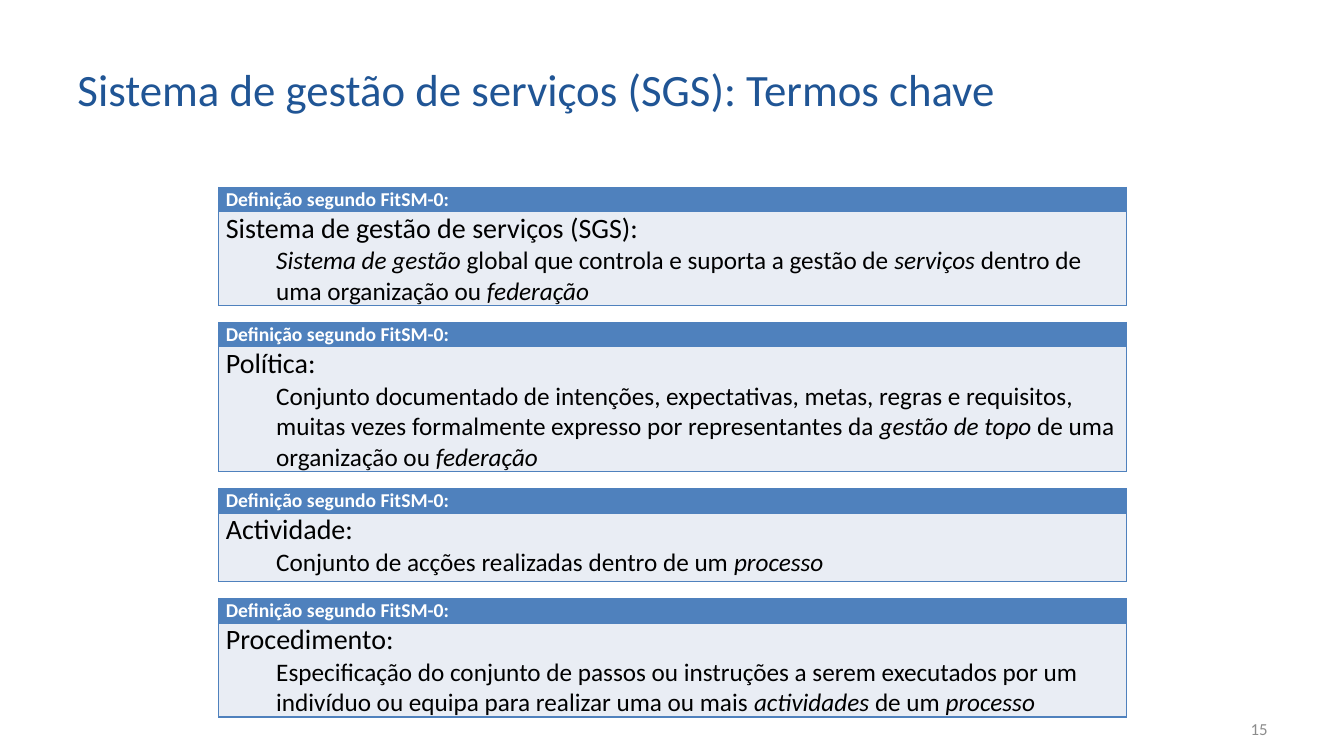
import pptx
import pptx.dml.color
import pptx.enum.text
import pptx.oxml
import pptx.oxml.ns
import pptx.util

Inches = pptx.util.Inches
Pt = pptx.util.Pt
ALIGN = pptx.enum.text.PP_ALIGN
ANCHOR = pptx.enum.text.MSO_ANCHOR

FONT = "Calibri"
BLUE = "4F81BD"
PALE = "E9EDF4"
HEADING = "Definição segundo FitSM-0:"
HEADING_HEIGHT = 0.24
GAP = 0.17

# Term, definition (asterisks enclose italics), height of the definition row
DEFINITIONS = [
    ("Sistema de gestão de serviços (SGS):",
     "*Sistema de gestão *global que controla e suporta a gestão de *serviços *"
     "dentro de uma organização ou *federação*", 0.93),
    ("Política:",
     "Conjunto documentado de intenções, expectativas, metas, regras e requisitos, "
     "muitas vezes formalmente expresso por representantes da *gestão de topo *"
     "de uma organização ou *federação*", 1.24),
    ("Actividade:",
     "Conjunto de acções realizadas dentro de um *processo*", 0.68),
    ("Procedimento:",
     "Especificação do conjunto de passos ou instruções a serem executados por um "
     "indivíduo ou equipa para realizar uma ou mais *actividades *de um *processo*",
     0.93),
]


def color(hex_value):
    return pptx.dml.color.RGBColor.from_string(hex_value)


def write(paragraph, text, size=18, fill="000000", bold=False, align=ALIGN.LEFT,
          indent=0):
    """Fill a paragraph; text between asterisks is italic."""
    paragraph.alignment = align
    if indent:
        properties = paragraph._p.get_or_add_pPr()
        properties.set("marL", str(Inches(indent)))
        properties.set("indent", "0")
    for index, part in enumerate(text.split("*")):
        if part:
            run = paragraph.add_run()
            run.text = part
            run.font.name = FONT
            run.font.size = Pt(size)
            run.font.bold = bold
            run.font.italic = index % 2 == 1
            run.font.color.rgb = color(fill)


def add_label(slide, text, left, top, width, height, **text_format):
    label = slide.shapes.add_textbox(
        Inches(left), Inches(top), Inches(width), Inches(height))
    label.text_frame.word_wrap = True
    label.text_frame.vertical_anchor = ANCHOR.MIDDLE
    write(label.text_frame.paragraphs[0], text, **text_format)


def style_cell(cell, fill):
    """Set the margins, borders and fill of a cell."""
    cell.margin_left = cell.margin_right = Inches(0.07)
    cell.margin_top = cell.margin_bottom = 0
    properties = cell._tc.get_or_add_tcPr()
    for side in "LRTB":
        properties.append(pptx.oxml.parse_xml(
            f'<a:ln{side} {pptx.oxml.ns.nsdecls("a")} w="{Pt(1)}"><a:solidFill>'
            f'<a:srgbClr val="{BLUE}"/></a:solidFill></a:ln{side}>'))
    cell.fill.solid()
    cell.fill.fore_color.rgb = color(fill)


def add_definition(slide, term, definition, left, top, width, body_height):
    table = slide.shapes.add_table(
        2, 1, Inches(left), Inches(top), Inches(width),
        Inches(HEADING_HEIGHT + body_height)).table
    table.rows[0].height = Inches(HEADING_HEIGHT)
    table.rows[1].height = Inches(body_height)
    heading, body = table.cell(0, 0), table.cell(1, 0)
    style_cell(heading, BLUE)
    style_cell(body, PALE)
    write(heading.text_frame.paragraphs[0], HEADING, size=14, fill="FFFFFF", bold=True)
    write(body.text_frame.paragraphs[0], term, size=20)
    write(body.text_frame.add_paragraph(), definition, indent=0.5)


def add_definitions(slide, left, top, width):
    """Stack the definition tables with equal gaps."""
    for term, definition, body_height in DEFINITIONS:
        add_definition(slide, term, definition, left, top, width, body_height)
        top += HEADING_HEIGHT + body_height + GAP


def main():
    presentation = pptx.Presentation()
    presentation.slide_width = Inches(13.33)
    presentation.slide_height = Inches(7.5)
    slide = presentation.slides.add_slide(presentation.slide_layouts[6])
    add_label(slide, "Sistema de gestão de serviços (SGS): Termos chave",
              0.67, 0.3, 9.91, 1.15, size=32, fill="205595")
    add_label(slide, "15", 9.56, 7.03, 3.11, 0.4,
              size=12, fill="8C8C8C", align=ALIGN.RIGHT)
    add_definitions(slide, 2.17, 1.86, 9)
    presentation.save("out.pptx")


if __name__ == "__main__":
    main()
